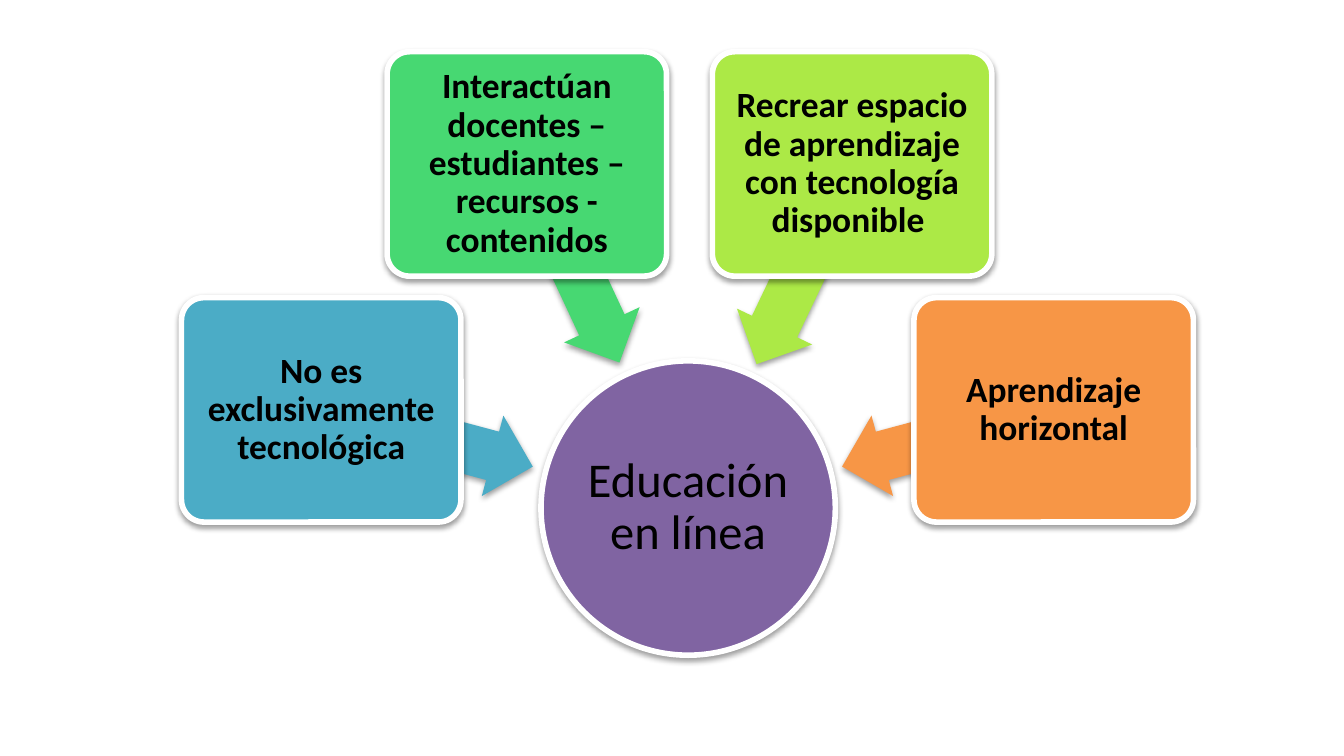
from math import cos, radians, sin

from lxml.etree import SubElement
from pptx import Presentation
from pptx.dml.color import RGBColor
from pptx.enum.shapes import MSO_SHAPE
from pptx.enum.text import MSO_ANCHOR, PP_ALIGN
from pptx.oxml.ns import qn
from pptx.util import Inches, Pt

COLORS = {
    "white": "FFFFFF",
    "black": "000000",
    "purple": "8064A2",
    "blue": "4BACC6",
    "green": "47D872",
    "lime": "ACE946",
    "orange": "F79646",
}
CARD_WIDTH, CARD_HEIGHT = 2.08, 1.67
ARROW_HEIGHT = 0.62
HUB_SIZE = 2.19
CARDS = [
    ("No es exclusivamente tecnológica", "blue", 2.39, 3.05, 195, 1.63),
    ("Interactúan docentes – estudiantes – recursos - contenidos", "green", 3.92, 1.22, 245, 1.63),
    ("Recrear espacio de aprendizaje con tecnología disponible ", "lime", 6.34, 1.22, 295.5, 1.65),
    ("Aprendizaje horizontal", "orange", 7.84, 3.05, 345, 1.63),
]


class Diagram:
    font = "Calibri"

    def __init__(self, slide):
        self.slide = slide

    def color(self, name):
        return RGBColor.from_string(COLORS[name])

    def add_shadow(self, shape):
        shape.shadow.inherit = False
        effects = shape.element.spPr.find(qn("a:effectLst"))
        shadow = SubElement(effects, qn("a:outerShdw"), blurRad=str(Pt(3.1)),
                            dist=str(Pt(1.6)), dir="5400000", rotWithShape="0")
        tint = SubElement(shadow, qn("a:srgbClr"), val=COLORS["black"])
        SubElement(tint, qn("a:alpha"), val="38000")

    def add_block(self, kind, center_x, center_y, width, height, fill):
        shape = self.slide.shapes.add_shape(
            kind, Inches(center_x - width / 2), Inches(center_y - height / 2),
            Inches(width), Inches(height))
        shape.fill.solid()
        shape.fill.fore_color.rgb = self.color(fill)
        self.add_shadow(shape)
        return shape

    def add_label(self, shape, text, size, bold, margin):
        shape.line.color.rgb = self.color("white")
        shape.line.width = Pt(3)
        frame = shape.text_frame
        frame.text = text
        frame.word_wrap = True
        frame.vertical_anchor = MSO_ANCHOR.MIDDLE
        frame.margin_left = frame.margin_right = Inches(margin)
        frame.margin_top = frame.margin_bottom = Inches(margin)
        paragraph = frame.paragraphs[0]
        paragraph.alignment = PP_ALIGN.CENTER
        paragraph.line_spacing = 0.9
        font = paragraph.runs[0].font
        font.name = self.font
        font.size = Pt(size)
        font.bold = bold
        font.color.rgb = self.color("black")

    def add_hub(self, text, center_x, center_y):
        hub = self.add_block(MSO_SHAPE.OVAL, center_x, center_y, HUB_SIZE, HUB_SIZE, "purple")
        self.add_label(hub, text, 26, False, 0.02)

    def add_arrow(self, fill, card_x, card_y, rotation, length):
        angle = radians(rotation - 180)
        arrow = self.add_block(
            MSO_SHAPE.LEFT_ARROW, card_x + length / 2 * cos(angle),
            card_y + length / 2 * sin(angle), length, ARROW_HEIGHT, fill)
        arrow.adjustments[0] = 0.6
        arrow.adjustments[1] = 0.5
        arrow.rotation = rotation
        arrow.line.fill.background()

    def add_card(self, text, fill, center_x, center_y):
        card = self.add_block(MSO_SHAPE.ROUNDED_RECTANGLE, center_x, center_y,
                              CARD_WIDTH, CARD_HEIGHT, fill)
        card.adjustments[0] = 0.1
        self.add_label(card, text, 19, True, 0.04)


def main():
    presentation = Presentation()
    presentation.slide_width = Inches(10)
    presentation.slide_height = Inches(10) * 9 // 16
    diagram = Diagram(presentation.slides.add_slide(presentation.slide_layouts[6]))
    diagram.add_hub("Educación en línea", 5.12, 3.78)
    for text, fill, center_x, center_y, rotation, length in CARDS:
        diagram.add_arrow(fill, center_x, center_y, rotation, length)
        diagram.add_card(text, fill, center_x, center_y)
    presentation.save("out.pptx")


if __name__ == "__main__":
    main()
